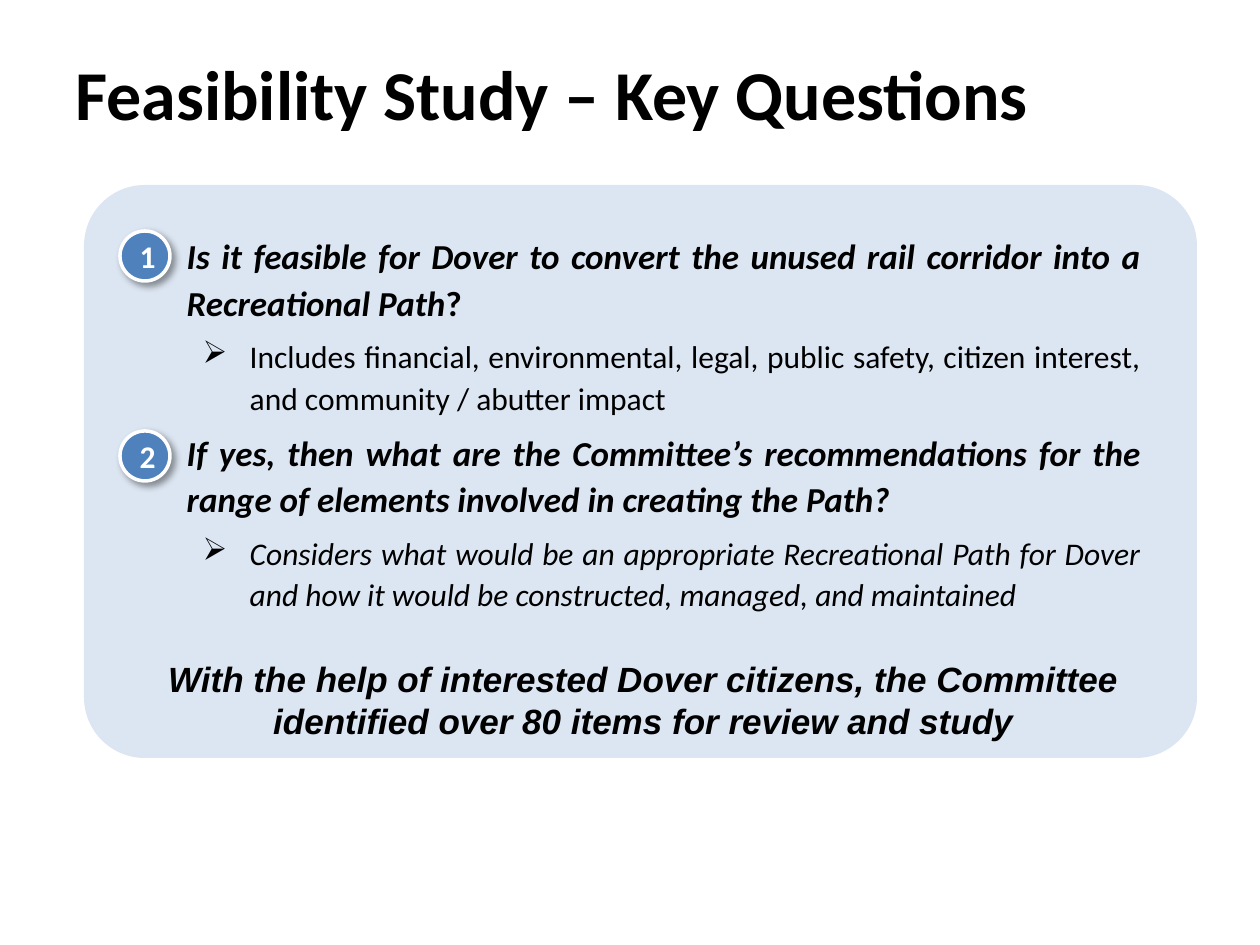
from lxml.etree import SubElement
from pptx import Presentation
from pptx.dml.color import RGBColor
from pptx.enum.shapes import MSO_SHAPE as Shape
from pptx.enum.text import MSO_ANCHOR as Anchor, PP_ALIGN as Align
from pptx.oxml import parse_xml
from pptx.oxml.ns import nsdecls, qn
from pptx.util import Pt

PX = 914400 / 126
BLACK = RGBColor(0x00, 0x00, 0x00)
WHITE = RGBColor(0xFF, 0xFF, 0xFF)
PALE = RGBColor(0xDC, 0xE6, 0xF2)
BLUE = RGBColor(0x4F, 0x81, 0xBD)

QUESTIONS = [
    ("Is it feasible for Dover to convert the unused rail corridor into a Recreational Path", "?",
     "Includes financial, environmental, legal, public safety, citizen interest, "
     "and community / abutter impact", False),
    ("If yes, then what are the Committee’s recommendations for the range of elements "
     "involved in creating the Path?", "",
     "Considers what would be an appropriate Recreational Path for Dover and how it would be "
     "constructed, managed, and maintained", True),
]


def emu(px):
    return round(px * PX)


class SlideBuilder:
    font = "Calibri"

    def __init__(self, prs):
        self.s = prs.slides.add_slide(prs.slide_layouts[5])

    def style(self, p, size, align, color=BLACK, bold=True, italic=None, font=None):
        p.alignment = align
        p.font.name = font or self.font
        p.font.size = Pt(size)
        p.font.bold = bold
        p.font.italic = italic
        p.font.color.rgb = color

    def title(self, text, x, y, w, h):
        sp = self.s.shapes.title
        sp.left, sp.top, sp.width, sp.height = map(emu, (x, y, w, h))
        tf = sp.text_frame
        tf.text = text
        tf.vertical_anchor = Anchor.MIDDLE
        self.style(tf.paragraphs[0], 40, Align.LEFT)

    def shape(self, kind, x, y, w, h, fill):
        sp = self.s.shapes.add_shape(kind, *map(emu, (x, y, w, h)))
        sp.shadow.inherit = False
        sp.fill.solid()
        sp.fill.fore_color.rgb = fill
        sp.line.fill.background()
        return sp

    def panel(self, x, y, w, h):
        sp = self.shape(Shape.ROUNDED_RECTANGLE, x, y, w, h, PALE)
        sp.adjustments[0] = 0.106
        tf = sp.text_frame
        tf.word_wrap = True
        tf.vertical_anchor = Anchor.TOP
        tf.margin_left = tf.margin_right = emu(38)
        tf.margin_top = emu(28)
        return tf

    def item(self, p, texts, size, margin, bold, italic, bullet=None):
        self.style(p, size, Align.JUSTIFY, bold=bold, italic=italic)
        p.line_spacing = 1.1
        p.space_after = Pt(6)
        for text in texts:
            p.add_run().text = text
        pPr = p._p.get_or_add_pPr()
        pPr.set("marL", str(emu(margin)))
        if bullet:
            pPr.set("indent", str(emu(-47)))
            mark = parse_xml(f'<a:buChar {nsdecls("a")} char="{bullet}"/>')
            pPr.find(qn("a:defRPr")).addprevious(mark)

    def badge(self, number, x, y, d):
        sp = self.shape(Shape.OVAL, x, y, d, d, BLUE)
        sp.line.color.rgb = WHITE
        sp.line.width = Pt(2)
        effects = sp._element.spPr.find(qn("a:effectLst"))
        shadow = SubElement(effects, qn("a:outerShdw"), blurRad=str(Pt(4)),
                            dist=str(Pt(3)), dir=str(45 * 60000))
        black = SubElement(shadow, qn("a:srgbClr"), val=str(BLACK))
        SubElement(black, qn("a:alpha"), val="40000")
        tf = sp.text_frame
        tf.text = str(number)
        tf.vertical_anchor = Anchor.MIDDLE
        self.style(tf.paragraphs[0], 18, Align.CENTER, color=WHITE)

    def closing(self, text, x, y, w, h):
        tf = self.s.shapes.add_textbox(*map(emu, (x, y, w, h))).text_frame
        tf.word_wrap = True
        tf.text = text
        p = tf.paragraphs[0]
        self.style(p, 20, Align.CENTER, italic=True, font="Arial")
        p.space_before = p.space_after = Pt(3)


def main():
    prs = Presentation()
    prs.slide_width, prs.slide_height = emu(1260), emu(945)
    slide = SlideBuilder(prs)
    slide.title("Feasibility Study – Key Questions", 63, 38, 1134, 110)

    tf = slide.panel(84, 185, 1113, 573)
    for i, (question, ending, detail, italic) in enumerate(QUESTIONS):
        p = tf.add_paragraph() if i else tf.paragraphs[0]
        slide.item(p, [question, ending] if ending else [question], 20, 47, True, True)
        if ending:
            p.runs[-1].font.italic = False
        slide.item(tf.add_paragraph(), [detail], 18, 110, False, italic, "➢")
    for i in range(len(QUESTIONS)):
        slide.badge(i + 1, 120, 231 + 200 * i, 50)

    slide.closing("With the help of interested Dover citizens, the Committee identified "
                  "over 80 items for review and study", 84, 651, 1119, 97)
    prs.save("out.pptx")


if __name__ == "__main__":
    main()
